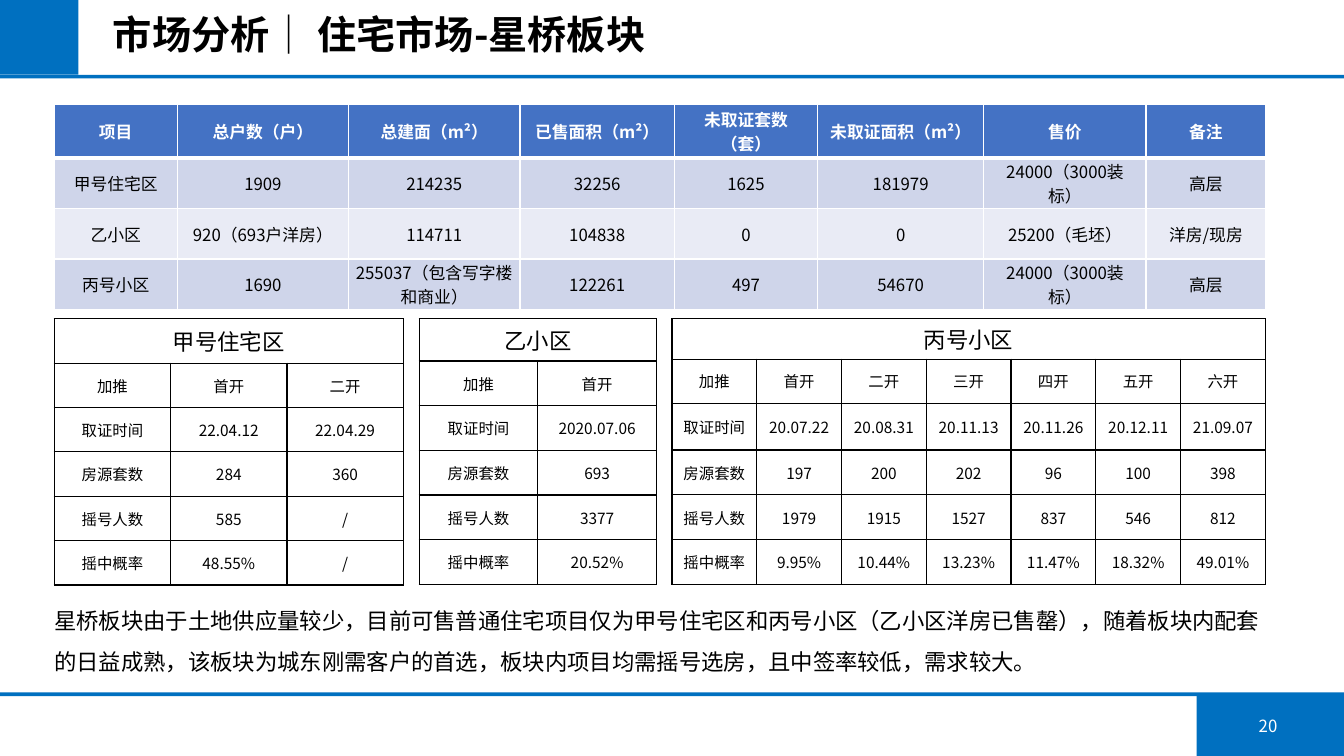
from dataclasses import dataclass

from lxml.etree import SubElement
from pptx import Presentation
from pptx.dml.color import RGBColor as Color
from pptx.enum.shapes import MSO_SHAPE as Shape
from pptx.enum.text import MSO_ANCHOR as Anchor, MSO_AUTO_SIZE as AutoSize, PP_ALIGN as Align
from pptx.oxml.ns import qn
from pptx.util import Pt


@dataclass(frozen=True)
class Theme:
    font: str = "Noto Sans CJK SC"
    accent: str = "0070C0"
    header: str = "4472C4"
    bands: tuple = ("CFD5EA", "E9EBF5")
    ink: str = "000000"
    paper: str = "FFFFFF"
    title: float = 28
    heading: float = 16
    body: float = 16
    summary: float = 12
    detail: float = 11
    footer: float = 12


THEME = Theme()
TABLE_LEFT = 38.8
DETAIL_TOP = 227.7

PROJECTS = [
    ["项目", "总户数（户）", "总建面（m²）", "已售面积（m²）",
     "未取证套数（套）", "未取证面积（m²）", "售价", "备注"],
    ["甲号住宅区", "1909", "214235", "32256", "1625", "181979", "24000（3000装标）", "高层"],
    ["乙小区", "920（693户洋房）", "114711", "104838", "0", "0", "25200（毛坯）", "洋房/现房"],
    ["丙号小区", "1690", "255037（包含写字楼和商业）", "122261", "497", "54670",
     "24000（3000装标）", "高层"],
]
PROJECT_COLUMNS = [87.8, 122.4, 122.4, 110.4, 102.2, 118.8, 115.9, 85.5]
PROJECT_ROWS = [38.5, 36, 36, 36]

LABELS = ["加推", "取证时间", "房源套数", "摇号人数", "摇中概率"]
LAUNCHES = [
    ("甲号住宅区", 38.8, 83.1, [31.7] * 6, [
        ["首开", "22.04.12", "284", "585", "48.55%"],
        ["二开", "22.04.29", "360", "/", "/"],
    ]),
    ("乙小区", 299.5, 84.7, [30.2] + [31.9] * 5, [
        ["首开", "2020.07.06", "693", "3377", "20.52%"],
    ]),
    ("丙号小区", 480, 60.55, [28.8, 31.5, 33.5, 32, 32, 32], [
        ["首开", "20.07.22", "197", "1979", "9.95%"],
        ["二开", "20.08.31", "200", "1915", "10.44%"],
        ["三开", "20.11.13", "202", "1527", "13.23%"],
        ["四开", "20.11.26", "96", "837", "11.47%"],
        ["五开", "20.12.11", "100", "546", "18.32%"],
        ["六开", "21.09.07", "398", "812", "49.01%"],
    ]),
]

CONCLUSION = (
    "星桥板块由于土地供应量较少，目前可售普通住宅项目仅为甲号住宅区和丙号小区（乙小区洋房已售罄），"
    "随着板块内配套的日益成熟，该板块为城东刚需客户的首选，板块内项目均需摇号选房，"
    "且中签率较低，需求较大。"
)


def write(frame, text, size, color=THEME.ink, bold=False, align=Align.LEFT, spacing=None):
    frame.text = text
    para = frame.paragraphs[0]
    para.alignment = align
    if spacing:
        para.line_spacing = spacing
    for span in para.runs:
        span.font.size = Pt(size)
        span.font.bold = bold
        span.font.color.rgb = Color.from_string(color)
        span.font.name = THEME.font
        SubElement(span.font._element, qn("a:ea"), typeface=THEME.font)


def place(shape, left, top, width, height):
    shape.left, shape.top = Pt(left), Pt(top)
    shape.width, shape.height = Pt(width), Pt(height)


def add_block(page, left, top, width, height):
    block = page.shapes.add_shape(Shape.RECTANGLE, Pt(left), Pt(top), Pt(width), Pt(height))
    block.shadow.inherit = False
    block.fill.solid()
    block.fill.fore_color.rgb = Color.from_string(THEME.accent)
    block.line.fill.background()


def add_title(page, text):
    title = page.shapes.title
    place(title, 73.5, 5.8, 412.5, 40.3)
    frame = title.text_frame
    frame.auto_size = AutoSize.NONE
    frame.vertical_anchor = Anchor.MIDDLE
    write(frame, text, THEME.title, bold=True, spacing=0.9)


def add_text(page, text, left, top, width, height, anchor=Anchor.TOP, **style):
    frame = page.shapes.add_textbox(Pt(left), Pt(top), Pt(width), Pt(height)).text_frame
    frame.word_wrap = True
    frame.vertical_anchor = anchor
    write(frame, text, **style)


def add_grid(page, left, top, columns, rows):
    table = page.shapes.add_table(
        len(rows), len(columns), Pt(left), Pt(top), Pt(sum(columns)), Pt(sum(rows))
    ).table
    for column, width in zip(table.columns, columns):
        column.width = Pt(width)
    for row, height in zip(table.rows, rows):
        row.height = Pt(height)
    return table


def style_cell(cell, fill, border, top=1, bottom=1, side=7.2):
    properties = cell._tc.get_or_add_tcPr()
    for edge, width in (("L", 1), ("R", 1), ("T", top), ("B", bottom)):
        line = SubElement(properties, qn(f"a:ln{edge}"), w=str(Pt(width)))
        paint = SubElement(line, qn("a:solidFill"))
        SubElement(paint, qn("a:srgbClr"), val=border)
    cell.fill.solid()
    cell.fill.fore_color.rgb = Color.from_string(fill)
    cell.vertical_anchor = Anchor.MIDDLE
    cell.margin_left = cell.margin_right = Pt(side)
    cell.margin_top = cell.margin_bottom = Pt(0.5)


def add_project_table(page):
    table = add_grid(page, TABLE_LEFT, 74.5, PROJECT_COLUMNS, PROJECT_ROWS)
    for i, record in enumerate(PROJECTS):
        is_header = i == 0
        fill = THEME.header if is_header else THEME.bands[(i - 1) % 2]
        for j, text in enumerate(record):
            cell = table.cell(i, j)
            style_cell(cell, fill, THEME.paper,
                       top=3 if i == 1 else 1,
                       bottom=3 if is_header else 1,
                       side=7.2 if is_header or j >= 6 else 0.7)
            write(cell.text_frame, text, THEME.summary,
                  THEME.paper if is_header else THEME.ink, is_header, Align.CENTER)


def add_launch_table(page, project, left, column_width, rows, launches):
    columns = [LABELS] + launches
    table = add_grid(page, left, DETAIL_TOP, [column_width] * len(columns), rows)
    for cell in table.iter_cells():
        style_cell(cell, THEME.paper, THEME.ink)
    heading = table.cell(0, 0)
    heading.merge(table.cell(0, len(columns) - 1))
    write(heading.text_frame, project, THEME.heading, align=Align.CENTER)
    for j, values in enumerate(columns):
        for i, text in enumerate(values, start=1):
            write(table.cell(i, j).text_frame, text, THEME.detail, align=Align.CENTER)


def main():
    deck = Presentation()
    deck.slide_width, deck.slide_height = Pt(960), Pt(540)
    page = deck.slides.add_slide(deck.slide_layouts[5])
    add_block(page, 854.8, 495.4, 105.2, 44.6)
    add_block(page, 0, 53.4, 960, 2.7)
    add_block(page, 0, 494.5, 960, 2.7)
    add_block(page, 0, 0, 56, 53.4)
    add_title(page, "市场分析│ 住宅市场-星桥板块")
    add_text(page, "20", 870.5, 504, 70.5, 28.8, Anchor.MIDDLE,
             size=THEME.footer, color=THEME.paper, align=Align.CENTER)
    add_text(page, CONCLUSION, 31.7, 420.5, 885, 62.6, size=THEME.body, spacing=Pt(29))
    add_project_table(page)
    for launch in LAUNCHES:
        add_launch_table(page, *launch)
    deck.save("out.pptx")


if __name__ == "__main__":
    main()
